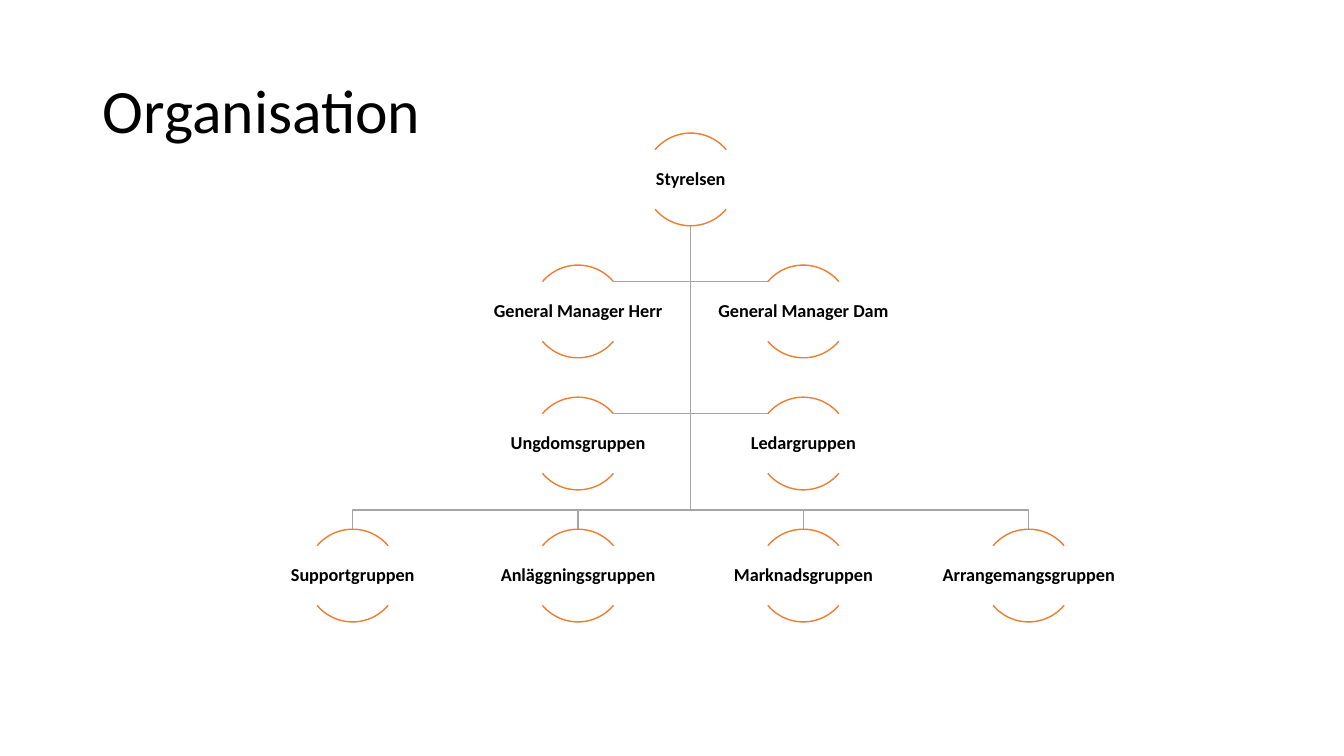
"""Build the organisation chart slide."""
from math import cos, radians, sin

from pptx import Presentation
from pptx.dml.color import RGBColor
from pptx.enum.shapes import MSO_SHAPE
from pptx.enum.text import MSO_ANCHOR, PP_ALIGN
from pptx.util import Inches, Pt

ARC = MSO_SHAPE.ARC
MIDDLE = MSO_ANCHOR.MIDDLE
LEFT, CENTER = PP_ALIGN.LEFT, PP_ALIGN.CENTER

TITLE = "Organisation"
BOARD = ("Styrelsen", 0, 0)
SIDE_UNITS = [
    ("General Manager Herr", -0.5, 1),
    ("General Manager Dam", 0.5, 1),
    ("Ungdomsgruppen", -0.5, 2),
    ("Ledargruppen", 0.5, 2),
]
GROUPS = [
    ("Supportgruppen", -1.5, 3),
    ("Anläggningsgruppen", -0.5, 3),
    ("Marknadsgruppen", 0.5, 3),
    ("Arrangemangsgruppen", 1.5, 3),
]

COLORS = {"text": "000000", "arc": "ED7D31", "connector": "A5A5A5"}
FONT = "Calibri"
SLIDE_WIDTH, SLIDE_HEIGHT = 13.33, 7.5
TITLE_BOX = (0.92, 0.4, 11.5, 1.45)
AXIS_X, FIRST_ROW_Y = 6.85, 1.32
COLUMN_PITCH, ROW_PITCH = 2.235, 1.31
DIAMETER = 0.92
LABEL_WIDTH, LABEL_HEIGHT = 1.85, 0.59
LABEL_INSET = 0.01
ARC_ANGLES = [(220, 320), (40, 140)]
ARC_UNITS_PER_DEGREE = 0.6
ARC_END = radians(40)
BUS_GAP = 0.19


def position(column, row):
    """Return the centre x and the top y of a unit's circle."""
    return AXIS_X + column * COLUMN_PITCH, FIRST_ROW_Y + row * ROW_PITCH


def style_line(shape, color):
    """Leave only a thin outline on a shape."""
    shape.shadow.inherit = False
    shape.fill.background()
    shape.line.color.rgb = RGBColor.from_string(COLORS[color])
    shape.line.width = Pt(1)


def style_text(text_frame, size, alignment, bold):
    """Format the single paragraph of a text frame."""
    text_frame.word_wrap = True
    text_frame.vertical_anchor = MIDDLE
    paragraph = text_frame.paragraphs[0]
    paragraph.alignment = alignment
    paragraph.line_spacing = 0.9
    font = paragraph.runs[0].font
    font.name, font.size, font.bold = FONT, Pt(size), bold
    font.color.rgb = RGBColor.from_string(COLORS["text"])


def add_connector_path(shapes, points):
    """Draw an open elbow line through the points."""
    start, *others = [(Inches(x), Inches(y)) for x, y in points]
    builder = shapes.build_freeform(*start)
    builder.add_line_segments(others, close=False)
    style_line(builder.convert_to_shape(), "connector")


def add_unit(shapes, name, column, row):
    """Draw the two arcs and the label of a unit."""
    x, top = position(column, row)
    for angles in ARC_ANGLES:
        arc = shapes.add_shape(ARC, Inches(x - DIAMETER / 2), Inches(top),
                               Inches(DIAMETER), Inches(DIAMETER))
        for index, angle in enumerate(angles):
            arc.adjustments[index] = angle * ARC_UNITS_PER_DEGREE
        style_line(arc, "arc")
    label = shapes.add_textbox(
        Inches(x - LABEL_WIDTH / 2), Inches(top + (DIAMETER - LABEL_HEIGHT) / 2),
        Inches(LABEL_WIDTH), Inches(LABEL_HEIGHT))
    frame = label.text_frame
    frame.text = name
    frame.margin_left = frame.margin_right = Inches(LABEL_INSET)
    frame.margin_top = frame.margin_bottom = Inches(LABEL_INSET)
    style_text(frame, 13, CENTER, True)


def main():
    """Create and save the presentation."""
    presentation = Presentation()
    presentation.slide_width = Inches(SLIDE_WIDTH)
    presentation.slide_height = Inches(SLIDE_HEIGHT)
    slide = presentation.slides.add_slide(presentation.slide_layouts[5])

    title = slide.shapes.title
    title.left, title.top, title.width, title.height = map(Inches, TITLE_BOX)
    title.text_frame.text = TITLE
    style_text(title.text_frame, 44, LEFT, False)

    shapes = slide.shapes.add_group_shape().shapes
    trunk = (AXIS_X, FIRST_ROW_Y + DIAMETER)
    radius = DIAMETER / 2
    for _, column, row in SIDE_UNITS:
        x, top = position(column, row)
        side = 1 if column > 0 else -1
        end_x = x - side * radius * cos(ARC_END)
        end_y = top + radius * (1 - sin(ARC_END))
        add_connector_path(shapes, [trunk, (AXIS_X, end_y), (end_x, end_y)])
    for _, column, row in GROUPS:
        x, top = position(column, row)
        bus_y = top - BUS_GAP
        add_connector_path(shapes, [trunk, (AXIS_X, bus_y), (x, bus_y), (x, top)])

    for unit in [BOARD, *GROUPS, *SIDE_UNITS]:
        add_unit(shapes, *unit)
    presentation.save("out.pptx")


if __name__ == "__main__":
    main()
